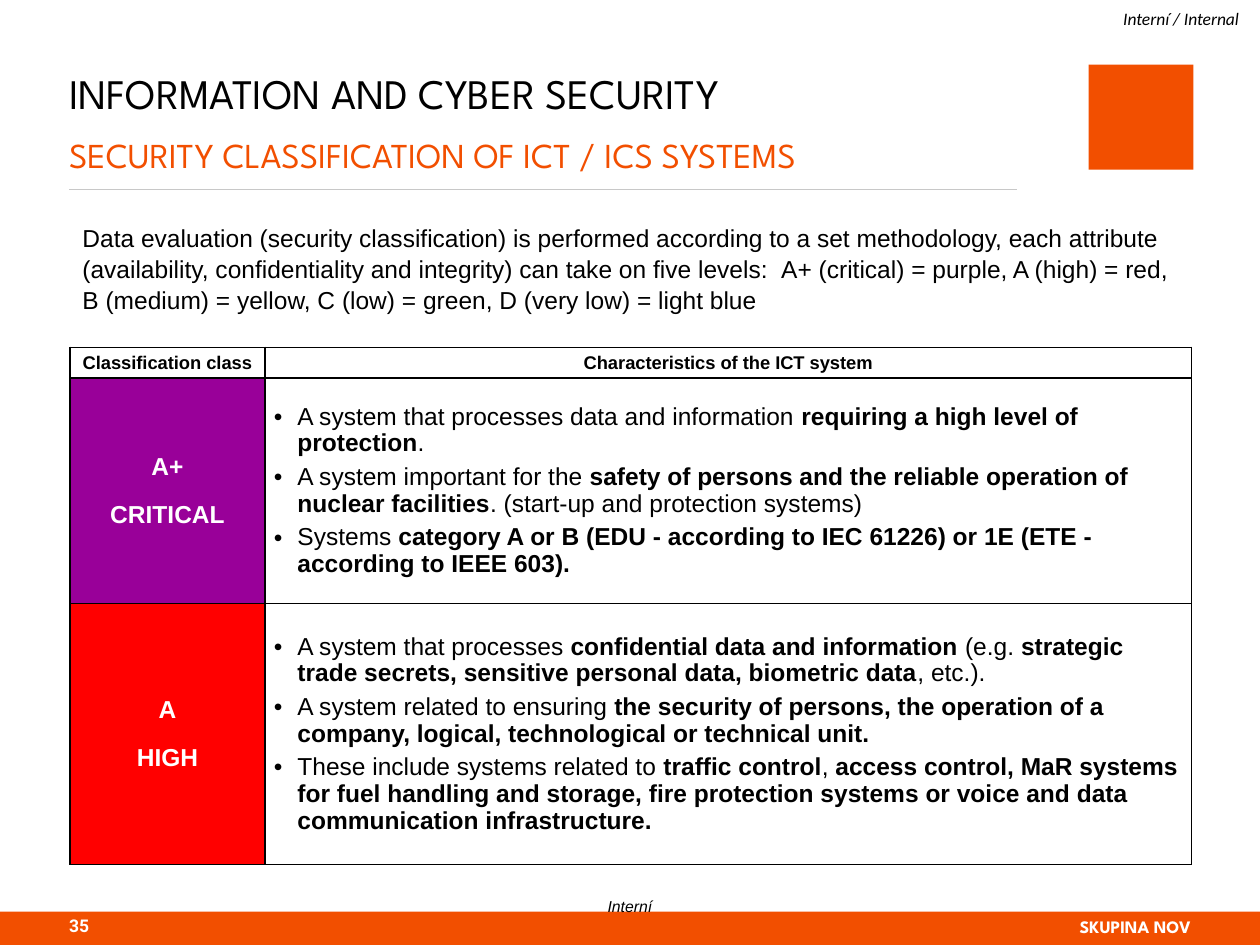
from dataclasses import dataclass

from lxml import etree
from pptx import Presentation
from pptx.dml.color import RGBColor
from pptx.enum.shapes import MSO_CONNECTOR, MSO_SHAPE
from pptx.enum.text import MSO_ANCHOR, MSO_AUTO_SIZE, PP_ALIGN
from pptx.oxml.ns import qn
from pptx.util import Pt

LEFT, CENTER, RIGHT = PP_ALIGN.LEFT, PP_ALIGN.CENTER, PP_ALIGN.RIGHT
TOP, MIDDLE = MSO_ANCHOR.TOP, MSO_ANCHOR.MIDDLE
RECTANGLE = MSO_SHAPE.RECTANGLE
STRAIGHT = MSO_CONNECTOR.STRAIGHT
NO_AUTOFIT = MSO_AUTO_SIZE.NONE
TITLE_ONLY = 5


@dataclass(frozen=True)
class Theme:
    orange: str = "F24F00"
    black: str = "000000"
    white: str = "FFFFFF"
    rule: str = "C8C8C8"
    purple: str = "990099"
    red: str = "FF0000"
    body_font: str = "Arial"
    heading_font: str = "League Spartan"
    label_font: str = "Calibri"
    number_font: str = "Roboto"
    title: float = 24
    subtitle: float = 20
    body: float = 14
    table_head: float = 10.5
    label: float = 10
    footer: float = 9


THEME = Theme()

HEADERS = ("Classification class", "Characteristics\u00a0of the ICT system")
# Text between ** marks is bold.
CLASSES = (
    (("A+", "CRITICAL"), THEME.purple, (
        "A system that processes data and information **requiring a high level of protection**.",
        "A system important for the **safety of persons and the reliable operation of "
        "nuclear facilities**. (start-up and protection systems)",
        "Systems **category A or B (EDU - according to IEC 61226) or 1E (ETE - "
        "according to IEEE 603).**",
    )),
    (("A", "HIGH"), THEME.red, (
        "A system that processes **confidential data and information **(e.g. **strategic "
        "trade secrets, sensitive personal data, biometric data**, etc.).",
        "A system related to ensuring **the security of persons, the operation of a "
        "company, logical, technological or technical unit.**",
        "These include systems related to\u00a0**traffic control**, **access control, MaR "
        "systems for fuel handling and storage, fire protection systems or voice and data "
        "communication infrastructure.**",
    )),
)
INTRO = (
    "Data evaluation (security classification) is performed according to a set methodology, "
    "each attribute (availability, confidentiality and integrity) can take on five levels: "
    "\u00a0A+ (critical) = purple, A (high) = red, B (medium) = yellow, C (low) = green, "
    "D (very low) = light blue"
)


def add_run(paragraph, text, size, color=THEME.black, font=THEME.body_font,
            bold=False, italic=False):
    run = paragraph.add_run()
    run.text = text
    run.font.size = Pt(size)
    run.font.name = font
    run.font.bold = bold
    run.font.italic = italic
    run.font.color.rgb = RGBColor.from_string(color)


def frame_setup(frame, anchor, inset=(0, 0)):
    frame.word_wrap = True
    frame.auto_size = NO_AUTOFIT
    frame.vertical_anchor = anchor
    frame.margin_left = frame.margin_right = Pt(inset[0])
    frame.margin_top = frame.margin_bottom = Pt(inset[1])


def add_text(slide, box, text, size, align=LEFT, anchor=MIDDLE, inset=(0, 0), **style):
    frame = slide.shapes.add_textbox(*map(Pt, box)).text_frame
    frame_setup(frame, anchor, inset)
    paragraph = frame.paragraphs[0]
    paragraph.alignment = align
    add_run(paragraph, text, size, **style)
    return paragraph


def add_block(slide, box, color):
    """Add a plain filled rectangle."""
    block = slide.shapes.add_shape(RECTANGLE, *map(Pt, box))
    block.shadow.inherit = False
    block.fill.solid()
    block.fill.fore_color.rgb = RGBColor.from_string(color)
    block.line.fill.background()


def add_heading(slide, box):
    left, top, width, height = box
    title = slide.shapes.title
    title.left, title.top = Pt(left), Pt(top)
    title.width, title.height = Pt(width), Pt(height)
    frame_setup(title.text_frame, TOP)
    paragraph = title.text_frame.paragraphs[0]
    paragraph.alignment = LEFT
    paragraph.line_spacing = Pt(33)
    add_run(paragraph, "INFORMATION AND CYBER SECURITY", THEME.title, font=THEME.heading_font)
    paragraph.add_line_break()
    add_run(paragraph, "SECURITY CLASSIFICATION OF ICT / ICS SYSTEMS", THEME.subtitle,
            THEME.orange, THEME.heading_font)

    rule_top = top + height + 9.5
    rule = slide.shapes.add_connector(
        STRAIGHT, Pt(left), Pt(rule_top), Pt(left + width), Pt(rule_top))
    rule.line.color.rgb = RGBColor.from_string(THEME.rule)
    rule.line.width = Pt(0.5)
    etree.SubElement(rule.element.spPr, qn("a:effectLst"))


def add_footer(slide, box):
    left, top, width, height = box
    margin = 39.5
    add_block(slide, box, THEME.orange)
    add_text(slide, (left + margin, top + 2, 25, 12), "35", THEME.label,
             color=THEME.white, font=THEME.number_font, bold=True)
    add_text(slide, (left + width - margin - 90, top + 2, 90, 13), "SKUPINA NOV", THEME.label,
             RIGHT, color=THEME.white, font=THEME.heading_font, bold=True)
    add_text(slide, (left + width / 2 - 14, top - 8.5, 28, 27), "Interní", THEME.footer,
             CENTER, TOP, italic=True)


def set_borders(cell):
    """Draw a thin black line on all four sides, ahead of the cell's fill."""
    properties = cell._tc.get_or_add_tcPr()
    for position, side in enumerate(("lnL", "lnR", "lnT", "lnB")):
        line = etree.Element(qn(f"a:{side}"), w=str(Pt(1)))
        fill = etree.SubElement(line, qn("a:solidFill"))
        etree.SubElement(fill, qn("a:srgbClr"), val=THEME.black)
        properties.insert(position, line)


def set_bullet(paragraph, indent):
    properties = paragraph._p.get_or_add_pPr()
    properties.set("marL", str(Pt(indent)))
    properties.set("indent", str(-Pt(indent)))
    etree.SubElement(properties, qn("a:buFont"), typeface=THEME.body_font)
    etree.SubElement(properties, qn("a:buChar"), char="•")


def fill_cell(cell, texts, size, fill=THEME.white, color=THEME.black, gap=2,
              bold=False, bulleted=False):
    cell.fill.solid()
    cell.fill.fore_color.rgb = RGBColor.from_string(fill)
    set_borders(cell)
    cell.vertical_anchor = MIDDLE
    cell.margin_left = cell.margin_right = Pt(5)
    cell.margin_top = cell.margin_bottom = Pt(0)
    frame = cell.text_frame
    for index, text in enumerate(texts):
        paragraph = frame.add_paragraph() if index else frame.paragraphs[0]
        paragraph.alignment = LEFT if bulleted else CENTER
        paragraph.space_before = paragraph.space_after = Pt(gap)
        if bulleted:
            paragraph.line_spacing = 0.97
            set_bullet(paragraph, 13.5)
        for part, words in enumerate(text.split("**")):
            if words:
                add_run(paragraph, words, size, color, bold=bold or part % 2 == 1)


def add_class_table(slide, box):
    graphic = slide.shapes.add_table(len(CLASSES) + 1, len(HEADERS), *map(Pt, box))
    table = graphic.table
    label_width = 111.5
    for column, width in zip(table.columns, (label_width, box[2] - label_width)):
        column.width = Pt(width)
    for row, height in zip(table.rows, (17.5, 129, box[3] - 146.5)):
        row.height = Pt(height)
    for column, header in enumerate(HEADERS):
        fill_cell(table.cell(0, column), [header], THEME.table_head, bold=True)
    for row, (label, color, points) in enumerate(CLASSES, start=1):
        fill_cell(table.cell(row, 0), label, THEME.body, color, THEME.white, gap=6, bold=True)
        fill_cell(table.cell(row, 1), points, THEME.body, bulleted=True)


def build_slide(presentation):
    slide = presentation.slides.add_slide(presentation.slide_layouts[TITLE_ONLY])
    add_block(slide, (622, 37, 60, 60), THEME.orange)
    add_text(slide, (608, 0, 100, 21), "Interní / Internal", THEME.label, RIGHT,
             font=THEME.label_font, italic=True)
    add_heading(slide, (39.5, 34.5, 541.5, 64))
    intro = add_text(slide, (40, 123, 641, 59), INTRO, THEME.body, anchor=TOP, inset=(7.2, 3.6))
    intro.line_spacing = 1.05
    add_class_table(slide, (40, 198.5, 641, 295.5))
    add_footer(slide, (0, 521, 720, 19))


def main():
    presentation = Presentation()
    presentation.slide_width, presentation.slide_height = Pt(720), Pt(540)
    build_slide(presentation)
    presentation.save("out.pptx")


if __name__ == "__main__":
    main()
